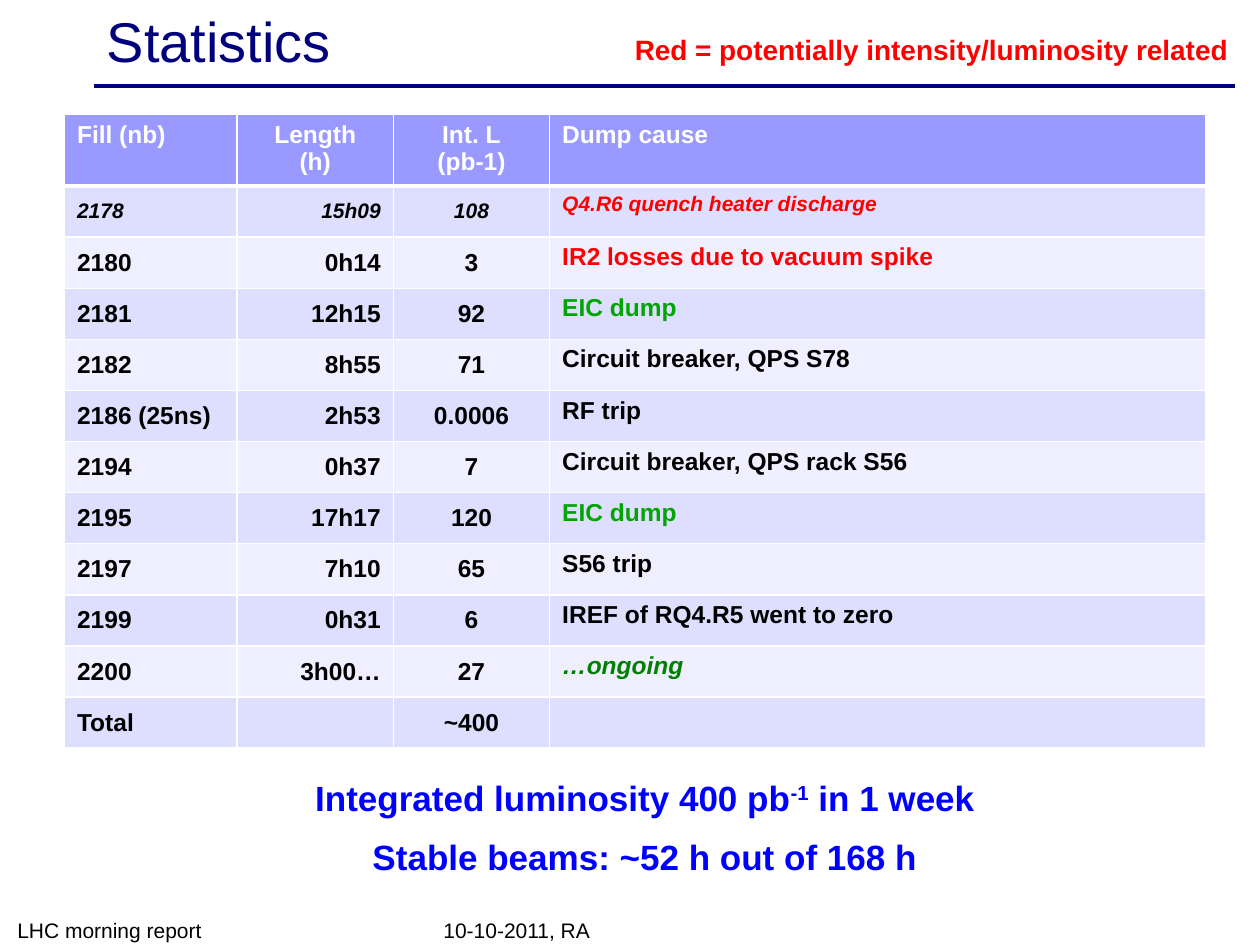
import pptx
import pptx.util
import pptx.dml.color
import pptx.enum.shapes
import pptx.enum.text
import pptx.oxml
import pptx.oxml.ns
from lxml import etree

Cm, Pt = pptx.util.Cm, pptx.util.Pt
ALIGN = pptx.enum.text.PP_ALIGN
ANCHOR = pptx.enum.text.MSO_ANCHOR

HUES = {
    "navy": "00007D", "blue": "0000FF", "red": "FF0000", "green": "00A501",
    "moss": "008000", "black": "000000", "white": "FFFFFF",
    "head": "9999FF", "odd": "DEDEFF", "even": "EFEFFF",
}

# Fill, length, luminosity, dump cause, and the colour of the cause
FILLS = [
    ("2178", "15h09", "108", "Q4.R6 quench heater discharge", "red"),
    ("2180", "0h14", "3", "IR2 losses due to vacuum spike", "red"),
    ("2181", "12h15", "92", "EIC dump", "green"),
    ("2182", "8h55", "71", "Circuit breaker, QPS S78", "black"),
    ("2186 (25ns)", "2h53", "0.0006", "RF trip", "black"),
    ("2194", "0h37", "7", "Circuit breaker, QPS rack S56", "black"),
    ("2195", "17h17", "120", "EIC dump", "green"),
    ("2197", "7h10", "65", "S56 trip", "black"),
    ("2199", "0h31", "6", "IREF of RQ4.R5 went to zero", "black"),
    ("2200", "3h00…", "27", "…ongoing", "moss"),
    ("Total", "", "~400", "", "black"),
]
HEADS = ["Fill (nb)", "Length\n(h)", "Int. L\n(pb-1)", "Dump cause"]
SIDES = [ALIGN.LEFT, ALIGN.RIGHT, ALIGN.CENTER, ALIGN.LEFT]


def hue(name):
    return pptx.dml.color.RGBColor.from_string(HUES[name])


def style(font, size, tint, **more):
    for key, value in {"name": "Arial", "size": Pt(size), **more}.items():
        setattr(font, key, value)
    font.color.rgb = hue(tint)


def write(frame, text, size, tint, side=ALIGN.LEFT, gap=0, **more):
    """Fill a frame; a caret sets off a raised run within a line."""
    for row, line in enumerate(text.split("\n")):
        para = frame.add_paragraph() if row else frame.paragraphs[0]
        para.alignment = side
        para.space_before = Pt(gap if row else 0)
        for part, words in enumerate(line.split("^")):
            run = para.add_run()
            run.text = words
            style(run.font, size, tint, **more)
            if part % 2:
                run.font._element.set("baseline", "30000")


def label(slide, box, text, size, tint, wrap=True, anchor=ANCHOR.TOP, **more):
    frame = slide.shapes.add_textbox(*map(Cm, box)).text_frame
    frame.word_wrap = wrap
    frame.vertical_anchor = anchor
    write(frame, text, size, tint, **more)


def edge(cell, base):
    """Draw white borders; base is the width of the lower one."""
    for tag, width in {"lnL": 1, "lnR": 1, "lnT": 1, "lnB": base}.items():
        cell._tc.get_or_add_tcPr().append(pptx.oxml.parse_xml(
            f'<a:{tag} {pptx.oxml.ns.nsdecls("a")} w="{Pt(width)}"><a:solidFill>'
            f'<a:srgbClr val="{HUES["white"]}"/></a:solidFill></a:{tag}>'))


def header(slide, box):
    left, top, width, height = box
    # Title
    title = slide.shapes.title
    for key, value in zip(("left", "top", "width", "height"),
                          (left, top, 22.86, 1.45)):
        setattr(title, key, Cm(value))
    title.text_frame.vertical_anchor = ANCHOR.MIDDLE
    write(title.text_frame, "Statistics", 32, "navy")
    # Rule below the title
    rule = slide.shapes.add_connector(
        pptx.enum.shapes.MSO_CONNECTOR.STRAIGHT,
        Cm(left), Cm(top + height), Cm(left + width), Cm(top + height))
    rule.line.color.rgb = hue("navy")
    rule.line.width = Pt(2)
    etree.SubElement(rule._element.spPr, pptx.oxml.ns.qn("a:effectLst"))
    # Colour key
    label(slide, (left + 10.57, top + 0.45, 12.62, 0.94),
          "Red = potentially intensity/luminosity related", 16, "red",
          wrap=False, side=ALIGN.CENTER, bold=True)


def grid(slide, box):
    left, top, width, height = box
    table = slide.shapes.add_table(
        len(FILLS) + 1, len(HEADS), *map(Cm, box)).table
    first = 1.35
    step = (height - first) / len(FILLS)
    for row, line in enumerate(table.rows):
        line.height = Cm(step if row else first)
    cols = [3.48, 3.15, 3.15]
    for col, size in zip(table.columns, cols + [width - sum(cols)]):
        col.width = Cm(size)

    # Head row
    for col, text in enumerate(HEADS):
        cell = table.cell(0, col)
        edge(cell, 3)
        cell.fill.solid()
        cell.fill.fore_color.rgb = hue("head")
        side = ALIGN.CENTER if col in (1, 2) else ALIGN.LEFT
        write(cell.text_frame, text, 14, "white", side, bold=True)

    # One row for each fill
    for row, (*texts, tint) in enumerate(FILLS, 1):
        for col, text in enumerate(texts):
            cell = table.cell(row, col)
            edge(cell, 1)
            cell.fill.solid()
            cell.fill.fore_color.rgb = hue("odd" if row % 2 else "even")
            cause = col == 3
            cell.vertical_anchor = ANCHOR.TOP if cause else ANCHOR.MIDDLE
            if text:
                write(cell.text_frame, text, 12 if row == 1 else 14,
                      tint if cause else "black", SIDES[col], bold=True,
                      italic=row == 1 or tint == "moss" and cause)


def summary(slide, box):
    label(slide, box,
          "Integrated luminosity 400 pb^-1^ in 1 week\n"
          "Stable beams: ~52 h out of 168 h",
          20, "blue", side=ALIGN.CENTER, gap=10, bold=True)


def footer(slide, box):
    left, top, width, height = box
    for shift, size, text in ((0, 5.92, "LHC morning report"),
                              (8.59, 8.05, "10-10-2011, RA")):
        label(slide, (left + shift, top, size, height), text, 12, "black",
              anchor=ANCHOR.BOTTOM)


def main():
    deck = pptx.Presentation()
    deck.slide_width, deck.slide_height = Cm(25.4), Cm(19.05)
    slide = deck.slides.add_slide(deck.slide_layouts[5])
    header(slide, (1.9, 0.08, 22.99, 1.65))
    grid(slide, (1.3, 2.31, 23.01, 12.68))
    summary(slide, (1.9, 15.52, 22.2, 2.39))
    footer(slide, (0.1, 18.4, 16.64, 0.72))
    deck.save("out.pptx")


if __name__ == "__main__":
    main()
